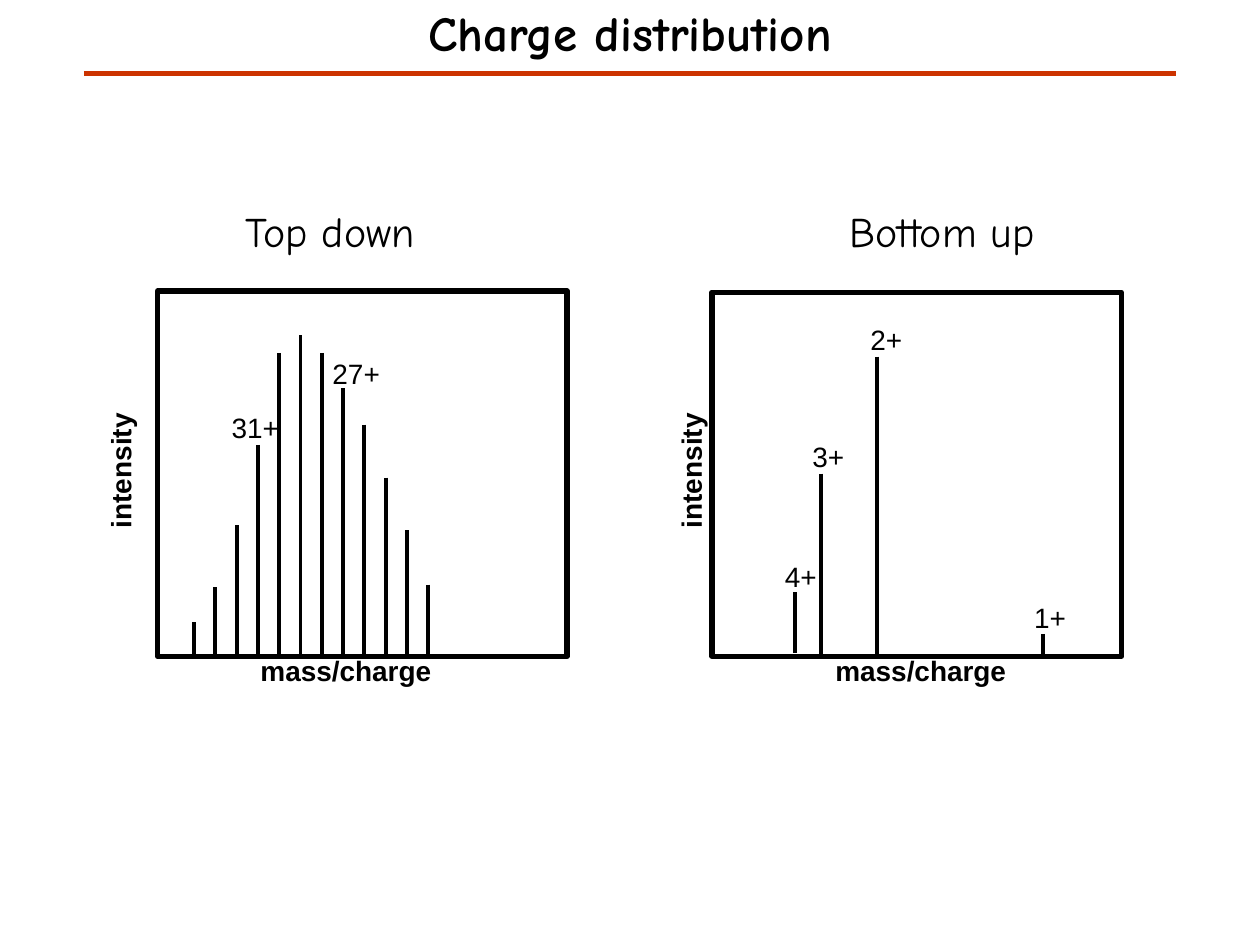
from pptx import Presentation
from pptx.dml.color import RGBColor
from pptx.enum.shapes import MSO_CONNECTOR, MSO_SHAPE
from pptx.enum.text import MSO_ANCHOR, MSO_AUTO_SIZE, PP_ALIGN
from pptx.oxml.ns import qn
from pptx.util import Pt
from lxml import etree

BLACK = RGBColor(0x00, 0x00, 0x00)
WHITE = RGBColor(0xFF, 0xFF, 0xFF)
RED = RGBColor(0xCC, 0x33, 0x00)

prs = Presentation()
prs.slide_width, prs.slide_height = Pt(720), Pt(540)
s = prs.slides.add_slide(prs.slide_layouts[6])


def add_text(text, x, y, w, h, size=16, font="Arial", bold=False, heading=False):
    sp = s.shapes.add_textbox(Pt(x), Pt(y), Pt(w), Pt(h))
    tf = sp.text_frame
    tf.word_wrap = heading
    p = tf.paragraphs[0]
    if heading:
        tf.vertical_anchor = MSO_ANCHOR.MIDDLE
        p.alignment = PP_ALIGN.CENTER
    else:
        tf.auto_size = MSO_AUTO_SIZE.SHAPE_TO_FIT_TEXT
    r = p.add_run()
    r.text = text
    r.font.size, r.font.name, r.font.bold = Pt(size), font, bold
    r.font.color.rgb = BLACK
    return sp


def add_line(x1, y1, x2, y2, color=BLACK, width=2.25):
    ln = s.shapes.add_connector(MSO_CONNECTOR.STRAIGHT, Pt(x1), Pt(y1), Pt(x2), Pt(y2))
    ln.line.color.rgb, ln.line.width = color, Pt(width)
    etree.SubElement(ln._element.spPr, qn("a:effectLst"))


# Title and rule
add_text("Charge distribution", 36, 0, 648, 36, 28, "Comic Neue", True, True)
add_line(48, 42, 672, 42, RED, 2.5)

# Peaks as (x, top, bottom); the top down series is evenly spaced
tops = [355.7, 335.5, 300.2, 254.2, 201.6, 191.5, 201.6, 221.8, 242.6, 272.9, 303.1, 334.1]
top_down_peaks = [(110.9 + 12.17 * i, top, 373.7) for i, top in enumerate(tops)]
bottom_up_peaks = [(454.3, 338.4, 373), (469.4, 270.7, 375.8),
                   (501.1, 203.8, 375.8), (596.2, 362.2, 375.8)]

# Charge labels as (text, x, y, width)
top_down_labels = [("31+", 125.3, 231.1, 51.8), ("27+", 182.9, 200.2, 51.8)]
bottom_up_labels = [("4+", 441.4, 316.1, 41), ("3+", 457.2, 247.7, 41),
                    ("2+", 490.3, 180.7, 41), ("1+", 583.9, 339.8, 41)]

# Spectra: heading, heading centre, frame x, y, height, axis label positions, data
spectra = [
    ("Top down", 188.5, 90, 166.3, 208.8, 28.1, 141.8, top_down_peaks, top_down_labels),
    ("Bottom up", 538.3, 406.8, 167, 208, 354.2, 470.3, bottom_up_peaks, bottom_up_labels),
]
for heading, cx, x, y, h, y_axis_x, x_axis_x, peaks, labels in spectra:
    add_text(heading, cx - 90, 114, 180, 36, 24, "Comic Neue", heading=True)
    add_text("mass/charge", x_axis_x, 370.1, 113, 26.6, bold=True)
    add_text("intensity", y_axis_x, 254.9, 81.4, 26.6, bold=True).rotation = 270

    # Frame
    sp = s.shapes.add_shape(MSO_SHAPE.RECTANGLE, Pt(x), Pt(y), Pt(234), Pt(h))
    sp.shadow.inherit = False
    sp.fill.solid()
    sp.fill.fore_color.rgb = WHITE
    sp.line.color.rgb, sp.line.width = BLACK, Pt(3)

    # Peaks and their charges
    for peak_x, top, bottom in peaks:
        add_line(peak_x, top, peak_x, bottom)
    for text, label_x, label_y, w in labels:
        add_text(text, label_x, label_y, w, 26.6)

prs.save("out.pptx")
